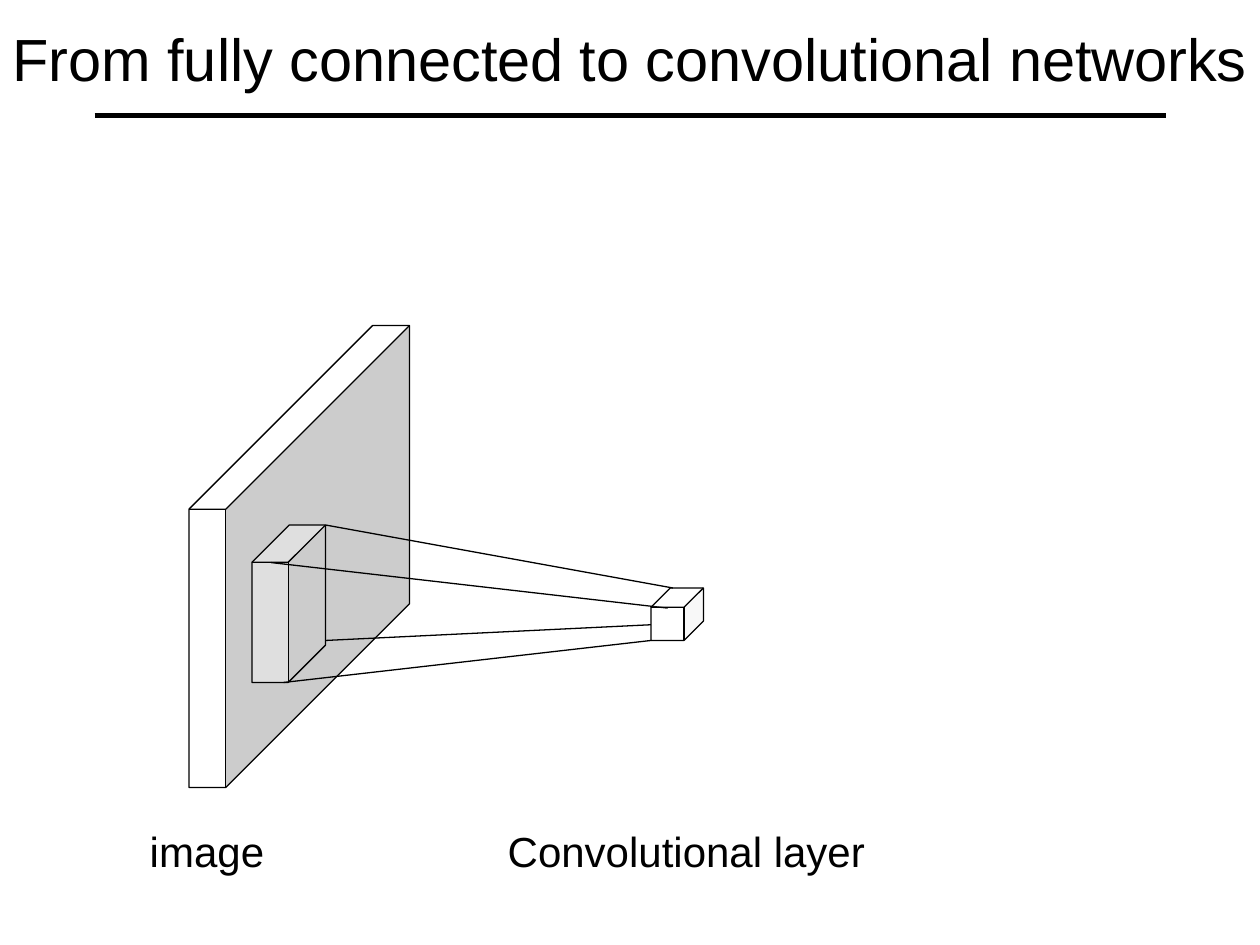
import pptx
import pptx.util
import pptx.dml.color
import pptx.enum.shapes
import pptx.enum.text
import pptx.oxml.ns
from lxml import etree

Pt = pptx.util.Pt
BLACK = pptx.dml.color.RGBColor(0x00, 0x00, 0x00)
WHITE = pptx.dml.color.RGBColor(0xFF, 0xFF, 0xFF)
FONT = "Arial"


def add_text(slide, box, text, size, anchor, wrap):
    text_box = slide.shapes.add_textbox(*map(Pt, box))
    frame = text_box.text_frame
    frame.text = text
    frame.word_wrap = wrap
    frame.vertical_anchor = anchor
    if not wrap:
        frame.auto_size = pptx.enum.text.MSO_AUTO_SIZE.SHAPE_TO_FIT_TEXT
    font = frame.paragraphs[0].runs[0].font
    font.name = FONT
    font.size = Pt(size)
    font.color.rgb = BLACK


def add_line(slide, start, end, weight=0.75):
    line = slide.shapes.add_connector(
        pptx.enum.shapes.MSO_CONNECTOR.STRAIGHT, *map(Pt, start + end))
    line.line.color.rgb = BLACK
    line.line.width = Pt(weight)
    etree.SubElement(line._element.spPr, pptx.oxml.ns.qn("a:effectLst"))


def add_cube(slide, box, depth, opacity=100):
    """Draw a white cube; depth is a share of its shorter side, opacity a percentage."""
    cube = slide.shapes.add_shape(pptx.enum.shapes.MSO_SHAPE.CUBE, *map(Pt, box))
    cube.shadow.inherit = False
    cube.adjustments[0] = depth
    cube.fill.solid()
    cube.fill.fore_color.rgb = WHITE
    cube.line.color.rgb = BLACK
    cube.line.width = Pt(0.75)
    if opacity < 100:
        color = cube._element.spPr.find(".//" + pptx.oxml.ns.qn("a:srgbClr"))
        alpha = etree.SubElement(color, pptx.oxml.ns.qn("a:alpha"))
        alpha.set("val", str(opacity * 1000))


def add_heading(slide, left, top, width, height):
    rule_y = top + height
    add_line(slide, (left + 54, rule_y), (left + 666, rule_y), 3)
    add_text(slide, (left, top, width, height),
             "From fully connected to convolutional networks", 34,
             pptx.enum.text.MSO_ANCHOR.MIDDLE, True)


def add_convolution(slide, left, top):
    """Draw the image, its receptive field and the unit the field projects to."""
    add_cube(slide, (left, top, 126, 264), 0.833)
    add_cube(slide, (left + 36, top + 114, 42, 90), 0.507, 39)
    projections = [
        ((78, 114), (276.5, 150)),
        ((47, 135.5), (273.5, 161.5)),
        ((54, 204), (264, 180)),
        ((78, 180), (264, 171)),
    ]
    for (field_x, field_y), (unit_x, unit_y) in projections:
        add_line(slide, (left + field_x, top + field_y),
                 (left + unit_x, top + unit_y))
    add_cube(slide, (left + 264, top + 150, 30, 30), 0.369, 13)


def add_captions(slide, top, height):
    for left, width, caption in [(78.5, 80.5, "image"),
                                 (283, 220.5, "Convolutional layer")]:
        add_text(slide, (left, top, width, height), caption, 24,
                 pptx.enum.text.MSO_ANCHOR.TOP, False)


def main():
    presentation = pptx.Presentation()
    presentation.slide_width = Pt(720)
    presentation.slide_height = Pt(540)
    slide = presentation.slides.add_slide(presentation.slide_layouts[6])
    add_heading(slide, 0, 0, 732, 66)
    add_convolution(slide, 108, 186)
    add_captions(slide, 468, 36)
    presentation.save("out.pptx")


if __name__ == "__main__":
    main()
